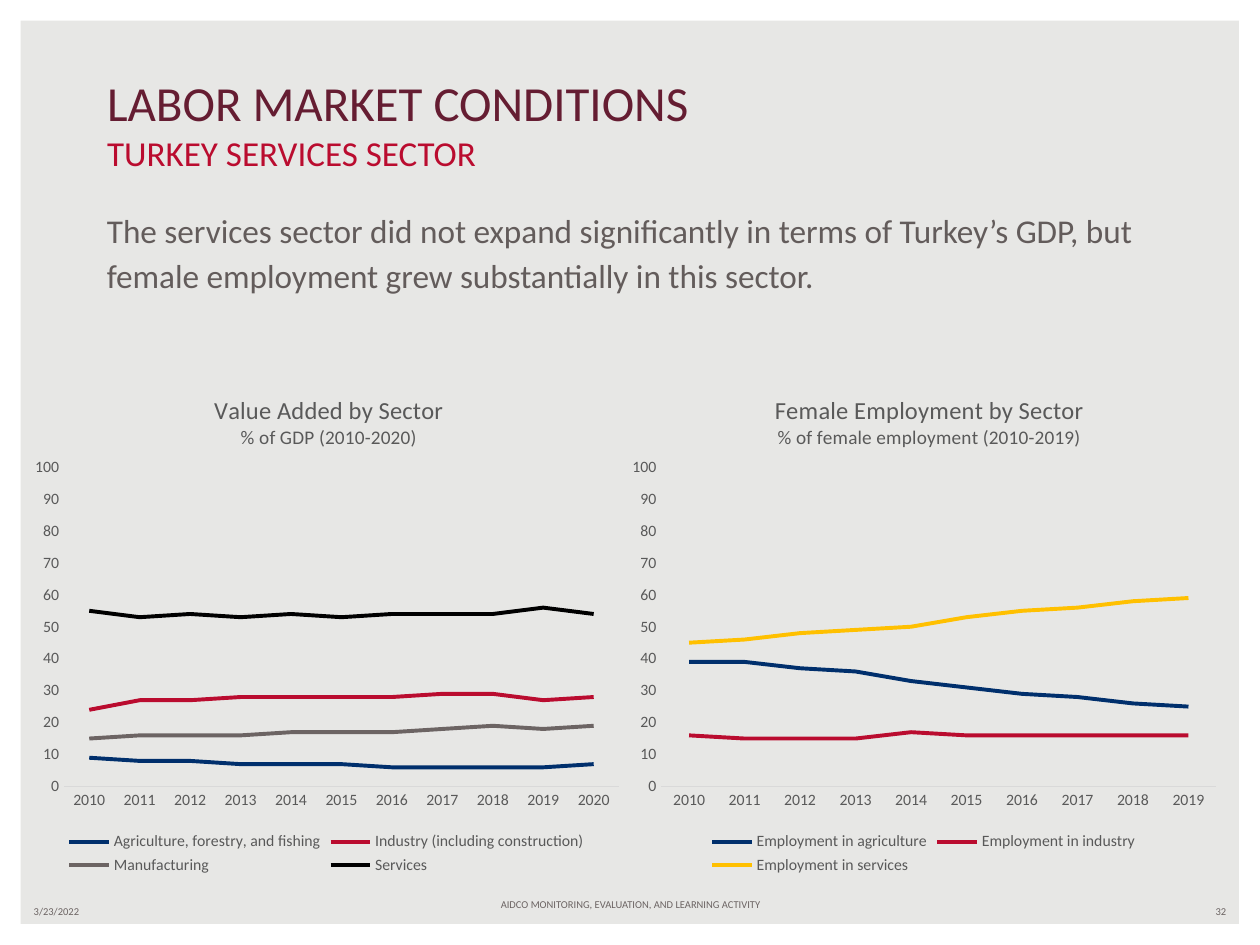
from lxml import etree
from pptx import Presentation
from pptx.chart.data import CategoryChartData
from pptx.dml.color import RGBColor
from pptx.enum.chart import XL_CHART_TYPE, XL_LEGEND_POSITION, XL_MARKER_STYLE, XL_TICK_MARK
from pptx.enum.shapes import MSO_SHAPE
from pptx.enum.text import MSO_ANCHOR, MSO_AUTO_SIZE, PP_ALIGN
from pptx.oxml.ns import qn
from pptx.util import Pt

LINE = XL_CHART_TYPE.LINE
BOTTOM = XL_LEGEND_POSITION.BOTTOM
NO_MARKER = XL_MARKER_STYLE.NONE
NO_TICK = XL_TICK_MARK.NONE
TOP, MIDDLE, BASE = MSO_ANCHOR.TOP, MSO_ANCHOR.MIDDLE, MSO_ANCHOR.BOTTOM
LEFT, CENTER, RIGHT = PP_ALIGN.LEFT, PP_ALIGN.CENTER, PP_ALIGN.RIGHT

FONT = "Calibri"
PAPER = RGBColor(0xE7, 0xE7, 0xE5)
WHITE = RGBColor(0xFF, 0xFF, 0xFF)
WINE = RGBColor(0x65, 0x1D, 0x32)
RED = RGBColor(0xBA, 0x0C, 0x2F)
NAVY = RGBColor(0x00, 0x2F, 0x6C)
GOLD = RGBColor(0xFF, 0xC0, 0x00)
BLACK = RGBColor(0x00, 0x00, 0x00)
GRAY = RGBColor(0x6C, 0x64, 0x63)
BODY_GRAY = RGBColor(0x63, 0x5C, 0x5B)
CHART_GRAY = RGBColor(0x59, 0x59, 0x59)
AXIS_GRAY = RGBColor(0xD9, 0xD9, 0xD9)

WIDTH, HEIGHT = 720, 540
HEADING = [("LABOR MARKET CONDITIONS", 28, WINE), ("TURKEY SERVICES SECTOR", 20, RED)]
MESSAGE = ("The services sector did not expand significantly in terms of Turkey’s GDP, "
           "but female employment grew substantially in this sector.")

# text, left, top, width, height, size, color, alignment, anchor, line spacing
TEXTS = [
    (MESSAGE, 54, 113, 605.5, 103.7, 19, BODY_GRAY, LEFT, TOP, 1.15),
    ("AIDCO MONITORING, EVALUATION, AND LEARNING ACTIVITY",
     246.2, 509.8, 228.2, 21.6, 6, GRAY, CENTER, TOP, 1),
    ("32", 540, 513.4, 167.8, 14.4, 6, GRAY, RIGHT, MIDDLE, 1),
    ("3/23/2022", 12.2, 513.4, 167.8, 14.4, 6, GRAY, LEFT, MIDDLE, 1),
]

CHART_TOP, CHART_WIDTH, CHART_HEIGHT = 208, 348.5, 294.5
PLOT_AREA = {"x": 0.07, "y": 0.2, "w": 0.91, "h": 0.62}
CHARTS = [
    {
        "left": 353.5, "title_left": 0.25, "years": range(2010, 2020),
        "title": ("Female Employment by Sector", "% of female employment (2010-2019)"),
        "series": [
            ("Employment in agriculture", NAVY, [39, 39, 37, 36, 33, 31, 29, 28, 26, 25]),
            ("Employment in industry", RED, [16, 15, 15, 15, 17, 16, 16, 16, 16, 16]),
            ("Employment in services", GOLD, [45, 46, 48, 49, 50, 53, 55, 56, 58, 59]),
        ],
    },
    {
        "left": 12.2, "title_left": 0.31, "years": range(2010, 2021),
        "title": ("Value Added by Sector", "% of GDP (2010-2020)"),
        "series": [
            ("Agriculture, forestry, and fishing", NAVY, [9, 8, 8, 7, 7, 7, 6, 6, 6, 6, 7]),
            ("Industry (including construction)", RED,
             [24, 27, 27, 28, 28, 28, 28, 29, 29, 27, 28]),
            ("Manufacturing", GRAY, [15, 16, 16, 16, 17, 17, 17, 18, 19, 18, 19]),
            ("Services", BLACK, [55, 53, 54, 53, 54, 53, 54, 54, 54, 56, 54]),
        ],
    },
]


def style(font, size, color):
    font.name, font.size, font.bold = FONT, Pt(size), False
    font.color.rgb = color


def place(part, left, top, width, height):
    part.left, part.top, part.width, part.height = map(Pt, (left, top, width, height))


def set_layout(parent, index, position, inner=False):
    for old in parent.findall(qn("c:layout")):
        parent.remove(old)
    layout = etree.Element(qn("c:layout"))
    manual = etree.SubElement(layout, qn("c:manualLayout"))
    settings = [("layoutTarget", "inner")] if inner else []
    settings += [(key + "Mode", "edge") for key in ("x", "y")]
    settings += position.items()
    for tag, value in settings:
        etree.SubElement(manual, qn("c:" + tag)).set("val", str(value))
    parent.insert(index, layout)


def add_text(slide, text, left, top, width, height, size, color, alignment, anchor, spacing):
    box = slide.shapes.add_textbox(Pt(left), Pt(top), Pt(width), Pt(height))
    frame = box.text_frame
    frame.word_wrap, frame.vertical_anchor = True, anchor
    frame.text = text
    paragraph = frame.paragraphs[0]
    paragraph.alignment, paragraph.line_spacing = alignment, spacing
    style(paragraph.runs[0].font, size, color)


def add_line_chart(slide, content):
    data = CategoryChartData(number_format="0")
    data.categories = [str(year) for year in content["years"]]
    for name, _, values in content["series"]:
        data.add_series(name, values)
    chart = slide.shapes.add_chart(LINE, Pt(content["left"]), Pt(CHART_TOP), Pt(CHART_WIDTH),
                                   Pt(CHART_HEIGHT), data).chart
    style(chart.font, 10, BLACK)

    title = chart.chart_title
    title.text_frame.text = "\n".join(content["title"])
    for paragraph, size in zip(title.text_frame.paragraphs, (14, 11)):
        style(paragraph.runs[0].font, size, CHART_GRAY)
    title.include_in_layout = False
    set_layout(title._element, 1, {"x": content["title_left"], "y": 0.05})
    set_layout(chart._chartSpace.chart.plotArea, 0, PLOT_AREA, inner=True)

    chart.plots[0].vary_by_categories = False
    for series, (_, color, _) in zip(chart.plots[0].series, content["series"]):
        series.smooth = False
        series.marker.style = NO_MARKER
        series.format.line.color.rgb = color
        series.format.line.width = Pt(2.25)

    years, percent = chart.category_axis, chart.value_axis
    for axis in (years, percent):
        axis.major_tick_mark = axis.minor_tick_mark = NO_TICK
        axis.has_major_gridlines = False
        style(axis.tick_labels.font, 9, CHART_GRAY)
    years.format.line.color.rgb = AXIS_GRAY
    years.format.line.width = Pt(0.75)
    percent.format.line.fill.background()
    percent.minimum_scale, percent.maximum_scale, percent.major_unit = 0, 100, 10
    percent.tick_labels.number_format = "0"
    percent.tick_labels.number_format_is_linked = False

    chart.has_legend = True
    chart.legend.position = BOTTOM
    chart.legend.include_in_layout = False
    style(chart.legend.font, 9, CHART_GRAY)


def main():
    deck = Presentation()
    deck.slide_width, deck.slide_height = Pt(WIDTH), Pt(HEIGHT)
    slide = deck.slides.add_slide(deck.slide_layouts[5])
    slide.background.fill.solid()
    slide.background.fill.fore_color.rgb = PAPER

    border = slide.shapes.add_shape(MSO_SHAPE.FRAME, 0, 0, Pt(WIDTH), Pt(HEIGHT))
    border.adjustments[0] = 0.022
    border.shadow.inherit = False
    border.fill.solid()
    border.fill.fore_color.rgb = WHITE
    border.line.fill.background()

    heading = slide.shapes.title
    place(heading, 54, 37.4, 612, 65.5)
    frame = heading.text_frame
    frame.text = "\v".join(text for text, _, _ in HEADING)
    frame.auto_size, frame.vertical_anchor = MSO_AUTO_SIZE.NONE, BASE
    frame.paragraphs[0].alignment = LEFT
    for run, (_, size, color) in zip(frame.paragraphs[0].runs, HEADING):
        style(run.font, size, color)

    for text in TEXTS:
        add_text(slide, *text)
    for content in CHARTS:
        add_line_chart(slide, content)
    deck.save("out.pptx")


if __name__ == "__main__":
    main()
